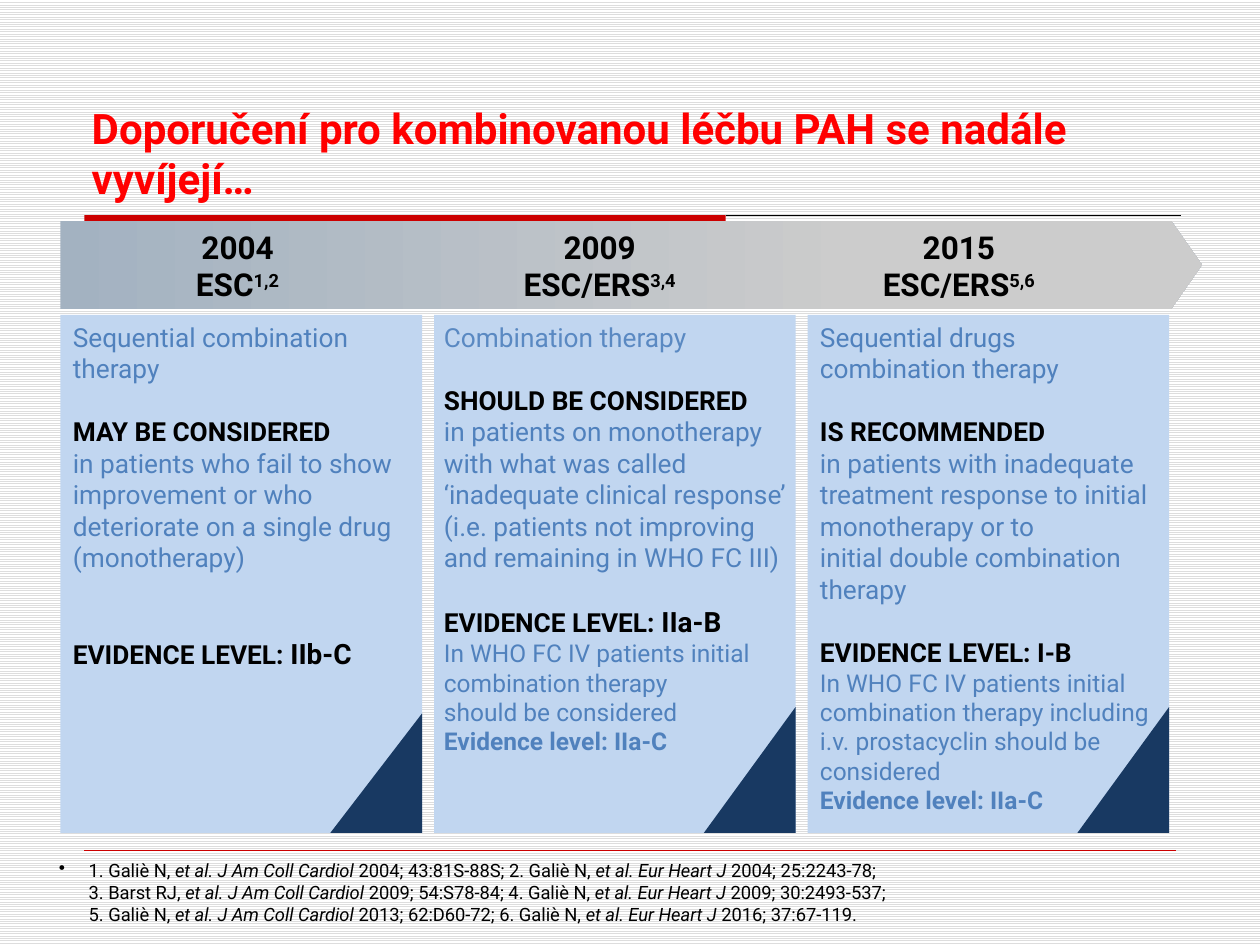
from collections import namedtuple

from lxml.etree import SubElement
from pptx import Presentation
from pptx.dml.color import RGBColor
from pptx.enum.dml import MSO_PATTERN
from pptx.enum.shapes import MSO_CONNECTOR, MSO_SHAPE
from pptx.enum.text import MSO_ANCHOR, PP_ALIGN
from pptx.oxml.ns import qn
from pptx.util import Cm, Pt

FONT = "Roboto"
WHITE = RGBColor(0xFF, 0xFF, 0xFF)
BLACK = RGBColor(0, 0, 0)
STRIPE = RGBColor(0xDD, 0xDD, 0xDD)
TITLE_RED = RGBColor(0xFF, 0, 0)
RULE_RED = RGBColor(0xCC, 0, 0)
ARROW_BLUE = RGBColor(0xA3, 0xB2, 0xC1)
ARROW_GREY = RGBColor(0xCC, 0xCC, 0xCC)
PANEL = RGBColor(0xC1, 0xD6, 0xF0)
NAVY = RGBColor(0x18, 0x39, 0x62)
TEXT_BLUE = RGBColor(0x50, 0x81, 0xBD)
SOFT_BLUE = RGBColor(0x5A, 0x89, 0xC2)

Style = namedtuple("Style", "size color bold italic", defaults=(False, False))
BODY = Style(15, TEXT_BLUE)
LEAD = Style(15, SOFT_BLUE)
STRONG = Style(15, BLACK, True)
GRADE = Style(16, BLACK, True)
SMALL = Style(14, TEXT_BLUE)
SMALL_STRONG = Style(14, TEXT_BLUE, True)
HEADING = Style(18, BLACK, True)
NOTE = Style(10.5, BLACK)
NOTE_ITALIC = Style(10.5, BLACK, italic=True)

LINE = 18  # height in points of one body line
PANEL_LEFT, PANEL_TOP, PANEL_W, PANEL_H, PANEL_STEP = 1.22, 6.35, 7.29, 10.44, 7.53
FOLD_W = 1.85

# Heading centre, organisation, reference numbers
HEADINGS = [
    (4.79, "2004", "ESC", "1,2"),
    (12.09, "2009", "ESC/ERS", "3,4"),
    (19.33, "2015", "ESC/ERS", "5,6"),
]

# Each paragraph: space before in points, then its runs
PANELS = [
    [
        (0, ("Sequential combination therapy", BODY)),
        (LINE, ("MAY BE CONSIDERED", STRONG)),
        (0, ("in patients who fail to show improvement or who deteriorate "
             "on a single drug (monotherapy)", BODY)),
        (2 * LINE, ("EVIDENCE LEVEL: ", STRONG), ("IIb-C", GRADE)),
    ],
    [
        (0, ("Combination therapy", LEAD)),
        (LINE, ("SHOULD BE CONSIDERED", STRONG)),
        (0, ("in patients on monotherapy with what was called ‘inadequate clinical "
             "response’ (i.e. patients not improving and remaining in WHO FC III)", BODY)),
        (LINE, ("EVIDENCE LEVEL: ", STRONG), ("IIa-B", GRADE)),
        (0, ("In WHO FC IV patients initial combination therapy", SMALL)),
        (0, ("should be considered", SMALL)),
        (0, ("Evidence level: IIa-C", SMALL_STRONG)),
    ],
    [
        (0, ("Sequential drugs combination therapy", BODY)),
        (LINE, ("IS RECOMMENDED", STRONG)),
        (0, ("in patients with inadequate treatment response to initial "
             "monotherapy or to", BODY)),
        (0, ("initial double combination therapy", BODY)),
        (LINE, ("EVIDENCE LEVEL: I-B", STRONG)),
        (0, ("In WHO FC IV patients initial combination therapy including "
             "i.v. prostacyclin should be considered", SMALL)),
        (0, ("Evidence level: IIa-C", SMALL_STRONG)),
    ],
]
FOLD_HEIGHTS = [2.41, 2.54, 2.54]
PANEL_INSETS = [(0.25, 0.25), (0.2, 0.1), (0.25, 0.25)]

# Bars mark where italics start and stop
REFERENCES = [
    "1. Galiè N, |et al. J Am Coll Cardiol |2004; 43:81S-88S; 2. Galiè N, "
    "|et al. Eur Heart J |2004; 25:2243-78;",
    "3. Barst RJ, |et al. J Am Coll Cardiol |2009; 54:S78-84; 4. Galiè N, "
    "|et al. Eur Heart J |2009; 30:2493-537;",
    "5. Galiè N, |et al. J Am Coll Cardiol |2013; 62:D60-72; 6. Galiè N, "
    "|et al. Eur Heart J |2016; 37:67-119.",
]


def add_run(p, text, style):
    r = p.add_run()
    r.text = text
    r.font.name = FONT
    r.font.size = Pt(style.size)
    r.font.color.rgb = style.color
    r.font.bold = style.bold
    r.font.italic = style.italic
    return r


def next_paragraph(tf, index):
    return tf.add_paragraph() if index else tf.paragraphs[0]


def add_shape(s, kind, x, y, w, h, color=None):
    sp = s.shapes.add_shape(kind, Cm(x), Cm(y), Cm(w), Cm(h))
    sp.shadow.inherit = False
    sp.line.fill.background()
    if color is not None:
        sp.fill.solid()
        sp.fill.fore_color.rgb = color
    return sp


def add_text_box(s, x, y, w, h, anchor=MSO_ANCHOR.TOP, wrap=True):
    tf = s.shapes.add_textbox(Cm(x), Cm(y), Cm(w), Cm(h)).text_frame
    tf.word_wrap = wrap
    tf.vertical_anchor = anchor
    return tf


def add_rule(s, x1, x2, y, color, width):
    line = s.shapes.add_connector(MSO_CONNECTOR.STRAIGHT, Cm(x1), Cm(y), Cm(x2), Cm(y))
    line.line.color.rgb = color
    line.line.width = Pt(width)
    SubElement(line._element.spPr, qn("a:effectLst"))


def add_timeline_arrow(s):
    sp = add_shape(s, MSO_SHAPE.PENTAGON, 1.22, 4.45, 23.01, 1.78)
    sp.adjustments[0] = 0.35
    sp.fill.gradient()
    sp.fill.gradient_angle = 0
    for stop, position, color in zip(sp.fill.gradient_stops, (0, 0.7), (ARROW_BLUE, ARROW_GREY)):
        stop.position = position
        stop.color.rgb = color


def add_heading(s, center, year, organisation, refs):
    tf = add_text_box(s, center - 2.03, 4.45, 4.06, 1.8, MSO_ANCHOR.MIDDLE, wrap=False)
    for i, text in enumerate((year, organisation)):
        p = next_paragraph(tf, i)
        p.alignment = PP_ALIGN.CENTER
        add_run(p, text, HEADING)
    r = add_run(p, refs, HEADING)
    r._r.get_or_add_rPr().set("baseline", "30000")


def add_panel(s, x, paragraphs, insets, fold_h):
    """Add a text panel with a dark folded corner at its lower right."""
    sp = add_shape(s, MSO_SHAPE.RECTANGLE, x, PANEL_TOP, PANEL_W, PANEL_H, PANEL)
    tf = sp.text_frame
    tf.word_wrap = True
    tf.vertical_anchor = MSO_ANCHOR.TOP
    tf.margin_left, tf.margin_right = (Cm(inset) for inset in insets)
    for i, (gap, *runs) in enumerate(paragraphs):
        p = next_paragraph(tf, i)
        p.alignment = PP_ALIGN.LEFT
        if gap:
            p.space_before = Pt(gap)
        for text, style in runs:
            add_run(p, text, style)

    center_x = x + PANEL_W - FOLD_W / 2
    center_y = PANEL_TOP + PANEL_H - fold_h / 2
    fold = add_shape(s, MSO_SHAPE.RIGHT_TRIANGLE, center_x - fold_h / 2,
                     center_y - FOLD_W / 2, fold_h, FOLD_W, NAVY)
    fold.rotation = 270


def add_references(s):
    p = add_text_box(s, 0.94, 17.2, 24.03, 1.6).paragraphs[0]
    pPr = p._p.get_or_add_pPr()
    pPr.set("marL", str(Cm(0.6)))
    pPr.set("indent", str(-Cm(0.6)))
    SubElement(pPr, qn("a:buChar"), char="•")
    for i, line in enumerate(REFERENCES):
        if i:
            p.add_line_break()
        for j, text in enumerate(line.split("|")):
            add_run(p, text, NOTE_ITALIC if j % 2 else NOTE)


def main():
    prs = Presentation()
    prs.slide_width, prs.slide_height = Cm(25.4), Cm(19.05)
    s = prs.slides.add_slide(prs.slide_layouts[6])
    fill = s.background.fill
    fill.patterned()
    fill.pattern = MSO_PATTERN.LIGHT_HORIZONTAL
    fill.fore_color.rgb = STRIPE
    fill.back_color.rgb = WHITE

    add_shape(s, MSO_SHAPE.RECTANGLE, 1.7, 4.34, 12.93, 0.3, RULE_RED)
    add_rule(s, 14.63, 23.8, 4.34, BLACK, 0.75)
    add_rule(s, 1.7, 23.7, 17.15, RULE_RED, 0.25)
    title = add_text_box(s, 1.6, 0.84, 22.23, 3.38, MSO_ANCHOR.BOTTOM)
    add_run(title.paragraphs[0], "Doporučení pro kombinovanou léčbu PAH se nadále vyvíjejí…",
            Style(24, TITLE_RED, True))

    add_timeline_arrow(s)
    for heading in HEADINGS:
        add_heading(s, *heading)
    for i, panel in enumerate(zip(PANELS, PANEL_INSETS, FOLD_HEIGHTS)):
        add_panel(s, PANEL_LEFT + i * PANEL_STEP, *panel)
    add_references(s)
    prs.save("out.pptx")


if __name__ == "__main__":
    main()
